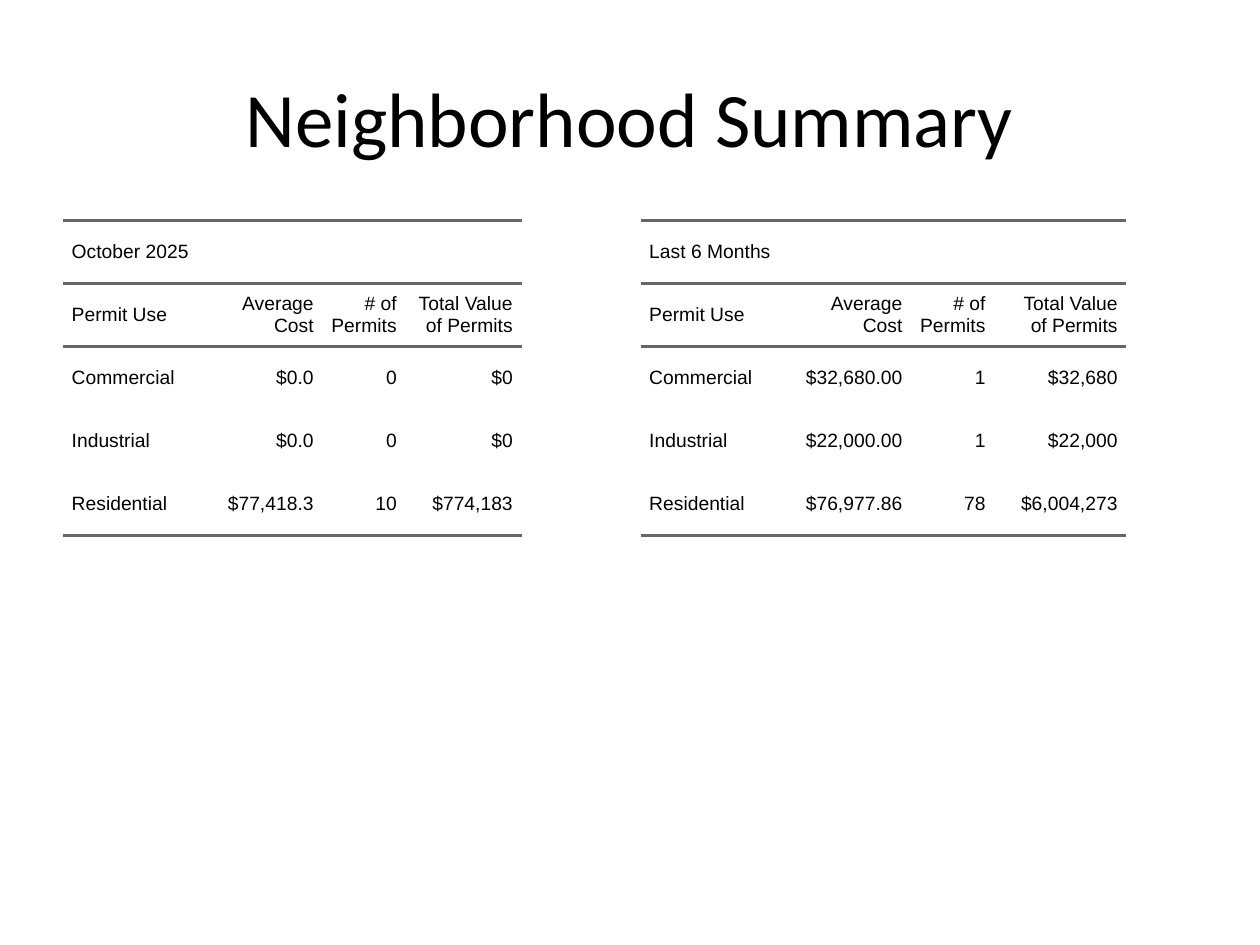
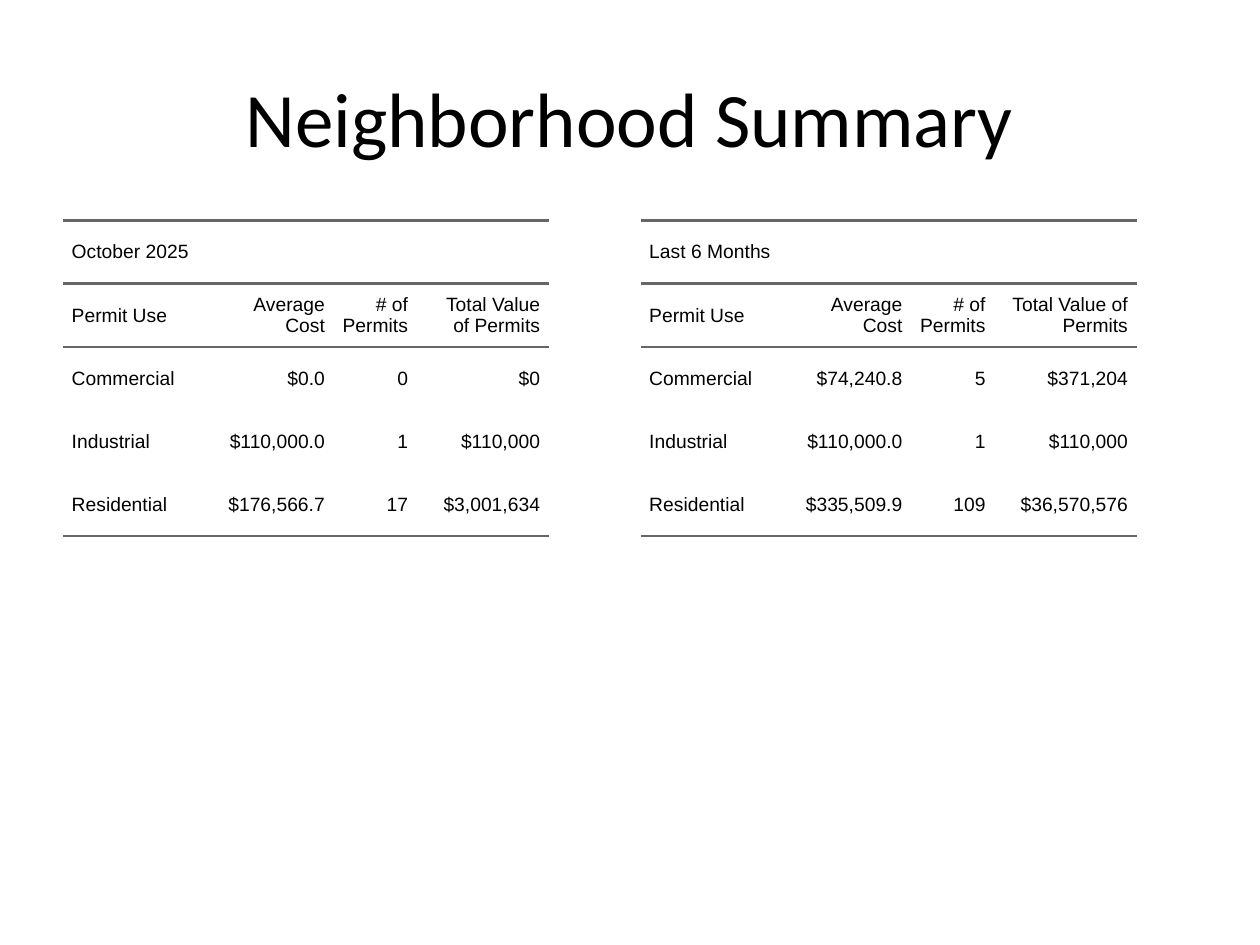
from lxml.etree import SubElement
from pptx import Presentation
from pptx.dml.color import RGBColor
from pptx.enum.text import MSO_ANCHOR as Anchor, PP_ALIGN as Align
from pptx.oxml.ns import qn
from pptx.util import Pt

INK = "000000"
RULE = "666666"
TITLE = "Neighborhood Summary"
TITLE_BOX = (36, 21.6, 648, 90)
TABLES_TOP = 126
TABLES_LEFT = (36, 366)
ROW_HEIGHT = 36
CELL_PADDING = 5
RULE_WIDTH = 1.5
NO_TABLE_STYLE = "{2D5ABB26-0587-4C30-8999-92F81FD0307C}"
HEADINGS = ("Permit Use", "Average Cost", "# of Permits", "Total Value of Permits")
USES = ("Commercial", "Industrial", "Residential")
USE_WIDTH, COUNT_WIDTH = 79.2, 47.5

# Each period: caption, widths of the cost and value columns, figures per use
NEIGHBORHOODS = (
    (
        ("October 2025", 69.1, 66.3,
         (("$0.0", "0", "$0"), ("$0.0", "0", "$0"), ("$77,418.3", "10", "$774,183"))),
        ("Last 6 Months", 75.5, 75.5,
         (("$32,680.00", "1", "$32,680"), ("$22,000.00", "1", "$22,000"),
          ("$76,977.86", "78", "$6,004,273"))),
    ),
    (
        ("October 2025", 75.5, 75.5,
         (("$0.0", "0", "$0"), ("$110,000.0", "1", "$110,000"),
          ("$176,566.7", "17", "$3,001,634"))),
        ("Last 6 Months", 75.5, 81.4,
         (("$74,240.8", "5", "$371,204"), ("$110,000.0", "1", "$110,000"),
          ("$335,509.9", "109", "$36,570,576"))),
    ),
)


def color(hex_code):
    return RGBColor.from_string(hex_code)


def style_paragraph(paragraph, font_name, size, align):
    paragraph.alignment = align
    paragraph.font.name = font_name
    paragraph.font.size = Pt(size)
    paragraph.font.color.rgb = color(INK)


def add_title(slide, left, top, width, height):
    title = slide.shapes.add_textbox(Pt(left), Pt(top), Pt(width), Pt(height)).text_frame
    title.word_wrap = True
    title.vertical_anchor = Anchor.MIDDLE
    title.text = TITLE
    style_paragraph(title.paragraphs[0], "Calibri", 44, Align.CENTER)


def add_rule(cell, edge):
    """Draw a cell border; edge is lnT (top) or lnB (bottom)."""
    properties = cell._tc.get_or_add_tcPr()
    line = SubElement(properties, qn(f"a:{edge}"), w=str(Pt(RULE_WIDTH)))
    SubElement(SubElement(line, qn("a:solidFill")), qn("a:srgbClr"), val=RULE)


def fill_cell(cell, text, align, edges):
    for edge in edges:
        add_rule(cell, edge)
    cell.fill.background()
    cell.vertical_anchor = Anchor.MIDDLE
    cell.margin_left = cell.margin_right = Pt(CELL_PADDING)
    cell.margin_top = cell.margin_bottom = Pt(CELL_PADDING)
    cell.text = text
    paragraph = cell.text_frame.paragraphs[0]
    style_paragraph(paragraph, "Arial", 11, align)
    paragraph.space_before = paragraph.space_after = Pt(5)


def add_permit_table(slide, left, top, caption, cost_width, value_width, figures):
    widths = (USE_WIDTH, cost_width, COUNT_WIDTH, value_width)
    rows = [(caption, "", "", ""), HEADINGS]
    rows += [(use, *numbers) for use, numbers in zip(USES, figures)]
    frame = slide.shapes.add_table(len(rows), len(widths), Pt(left), Pt(top),
                                   Pt(sum(widths)), Pt(ROW_HEIGHT * len(rows)))
    table = frame.table
    table.first_row = table.horz_banding = False
    table._tbl.tblPr.find(qn("a:tableStyleId")).text = NO_TABLE_STYLE

    for column, width in zip(table.columns, widths):
        column.width = Pt(width)
    for r, texts in enumerate(rows):
        table.rows[r].height = Pt(ROW_HEIGHT)
        if r < 2:
            edges = ("lnT", "lnB")
        else:
            edges = ("lnB",) if r == len(rows) - 1 else ()
        for c, text in enumerate(texts):
            fill_cell(table.cell(r, c), text, Align.RIGHT if c else Align.LEFT, edges)
    table.cell(0, 0).merge(table.cell(0, len(widths) - 1))


def add_summary_slide(deck, periods):
    slide = deck.slides.add_slide(deck.slide_layouts[6])
    for left, period in zip(TABLES_LEFT, periods):
        add_permit_table(slide, left, TABLES_TOP, *period)
    add_title(slide, *TITLE_BOX)


def main():
    deck = Presentation()
    deck.slide_width, deck.slide_height = Pt(720), Pt(540)
    for periods in NEIGHBORHOODS:
        add_summary_slide(deck, periods)
    deck.save("out.pptx")


if __name__ == "__main__":
    main()
